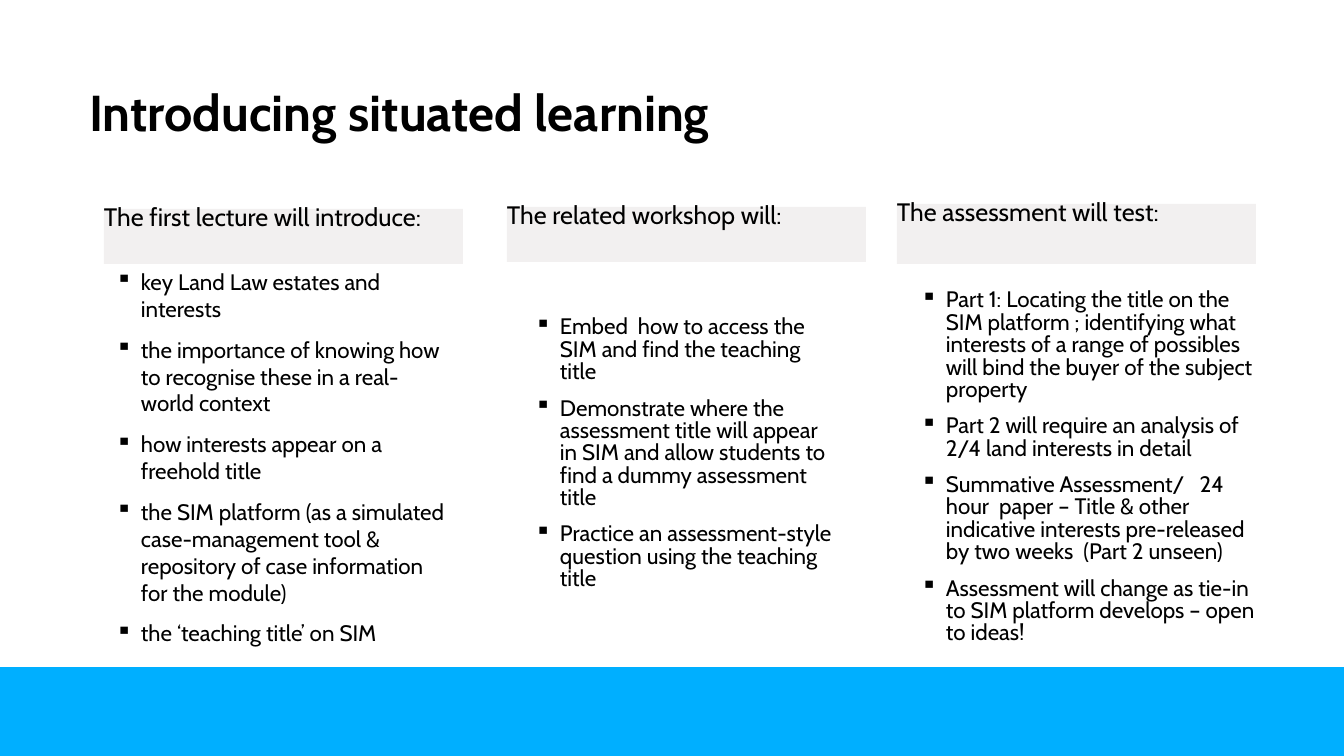
from dataclasses import dataclass

from lxml import etree
from pptx import Presentation
from pptx.dml.color import RGBColor
from pptx.enum.shapes import MSO_SHAPE
from pptx.enum.text import MSO_ANCHOR, PP_ALIGN
from pptx.oxml.ns import qn
from pptx.util import Emu, Pt

RECTANGLE = MSO_SHAPE.RECTANGLE
TOP = MSO_ANCHOR.TOP
LEFT = PP_ALIGN.LEFT
SLIDE_WIDTH, SLIDE_HEIGHT = 1344, 756
SCALE = 12192000 / SLIDE_WIDTH


@dataclass(frozen=True)
class Theme:
    font: str = "Cabin"
    ink: str = "000000"
    paper: str = "FFFFFF"
    accent: str = "00AFFF"
    band: str = "F2F0F0"
    title_size: int = 36
    heading_size: int = 18
    body_size: int = 16
    title_line: int = 38
    tight_line: int = 16
    gap: int = 10
    padding: int = 28
    indent: int = 25


def px(length):
    return Emu(round(length * SCALE))


class SlideBuilder:
    def __init__(self, slide, theme):
        self.slide = slide
        self.theme = theme

    def background(self):
        fill = self.slide.background.fill
        fill.solid()
        fill.fore_color.rgb = RGBColor.from_string(self.theme.accent)

    def panel(self, bounds, color):
        panel = self.slide.shapes.add_shape(RECTANGLE, *map(px, bounds))
        panel.shadow.inherit = False
        panel.fill.solid()
        panel.fill.fore_color.rgb = RGBColor.from_string(color)
        panel.line.fill.background()
        return panel

    def set_text(self, shape, lines, size, line_height=None, padding=0, bullets=False, bold=False):
        frame = shape.text_frame
        frame.word_wrap = True
        frame.vertical_anchor = TOP
        frame.margin_left = frame.margin_right = px(padding)
        frame.margin_top = frame.margin_bottom = px(padding)
        frame.text = "\n".join(lines)
        for index, paragraph in enumerate(frame.paragraphs):
            paragraph.alignment = LEFT
            if line_height:
                paragraph.line_spacing = Pt(line_height)
            if index:
                paragraph.space_before = Pt(self.theme.gap)
            if bullets:
                self.bullet(paragraph)
            for run in paragraph.runs:
                run.font.name = self.theme.font
                run.font.size = Pt(size)
                run.font.bold = bold
                run.font.color.rgb = RGBColor.from_string(self.theme.ink)

    def bullet(self, paragraph):
        properties = paragraph._p.get_or_add_pPr()
        indent = px(self.theme.indent)
        properties.set("marL", str(indent))
        properties.set("indent", str(-indent))
        etree.SubElement(properties, qn("a:buChar")).set("char", "▪")

    def title(self, bounds, text):
        box = self.slide.shapes.add_textbox(*map(px, bounds))
        self.set_text(box, [text], self.theme.title_size, self.theme.title_line, bold=True)

    def heading(self, bounds, text):
        band = self.panel(bounds, self.theme.band)
        self.set_text(band, [text], self.theme.heading_size, self.theme.tight_line)

    def bullet_list(self, bounds, points, line_height):
        box = self.slide.shapes.add_textbox(*map(px, bounds))
        self.set_text(box, points, self.theme.body_size, line_height, self.theme.padding, bullets=True)


def main():
    theme = Theme()
    deck = Presentation()
    deck.slide_width, deck.slide_height = px(SLIDE_WIDTH), px(SLIDE_HEIGHT)
    builder = SlideBuilder(deck.slides.add_slide(deck.slide_layouts[6]), theme)

    builder.background()
    builder.panel((0, 0, SLIDE_WIDTH, 667), theme.paper)
    builder.title((89, 88, 889, 55), "Introducing situated learning")

    lecture = [
        "key Land Law estates and interests",
        "the importance of knowing how to recognise these in a real-world context",
        "how interests appear on a freehold title",
        "the SIM platform (as a simulated case-management tool & repository of case "
        "information for the module)",
        "the ‘teaching title’ on SIM",
    ]
    workshop = [
        "Embed  how to access the SIM and find the teaching title",
        "Demonstrate where the assessment title will appear in SIM and allow students "
        "to find a dummy assessment title",
        "Practice an assessment-style question using the teaching title",
    ]
    assessment = [
        "Part 1: Locating the title on the SIM platform ; identifying what interests of "
        "a range of possibles will bind the buyer of the subject property",
        "Part 2 will require an analysis of 2/4 land interests in detail",
        "Summative Assessment/   24 hour  paper – Title & other indicative interests "
        "pre-released by two weeks  (Part 2 unseen)",
        "Assessment will change as tie-in to SIM platform develops – open to ideas!",
    ]
    columns = [
        ("The first lecture will introduce:", (104, 209, 359, 55),
         lecture, (88, 240, 388, 426), None),
        ("The related workshop will:", (507, 207, 359, 55),
         workshop, (507, 289, 359, 345), theme.tight_line),
        ("The assessment will test:", (897, 204, 359, 60),
         assessment, (893, 262, 402, 426), theme.tight_line),
    ]
    for heading, heading_bounds, points, list_bounds, line_height in columns:
        builder.heading(heading_bounds, heading)
        builder.bullet_list(list_bounds, points, line_height)

    deck.save("out.pptx")


if __name__ == "__main__":
    main()
